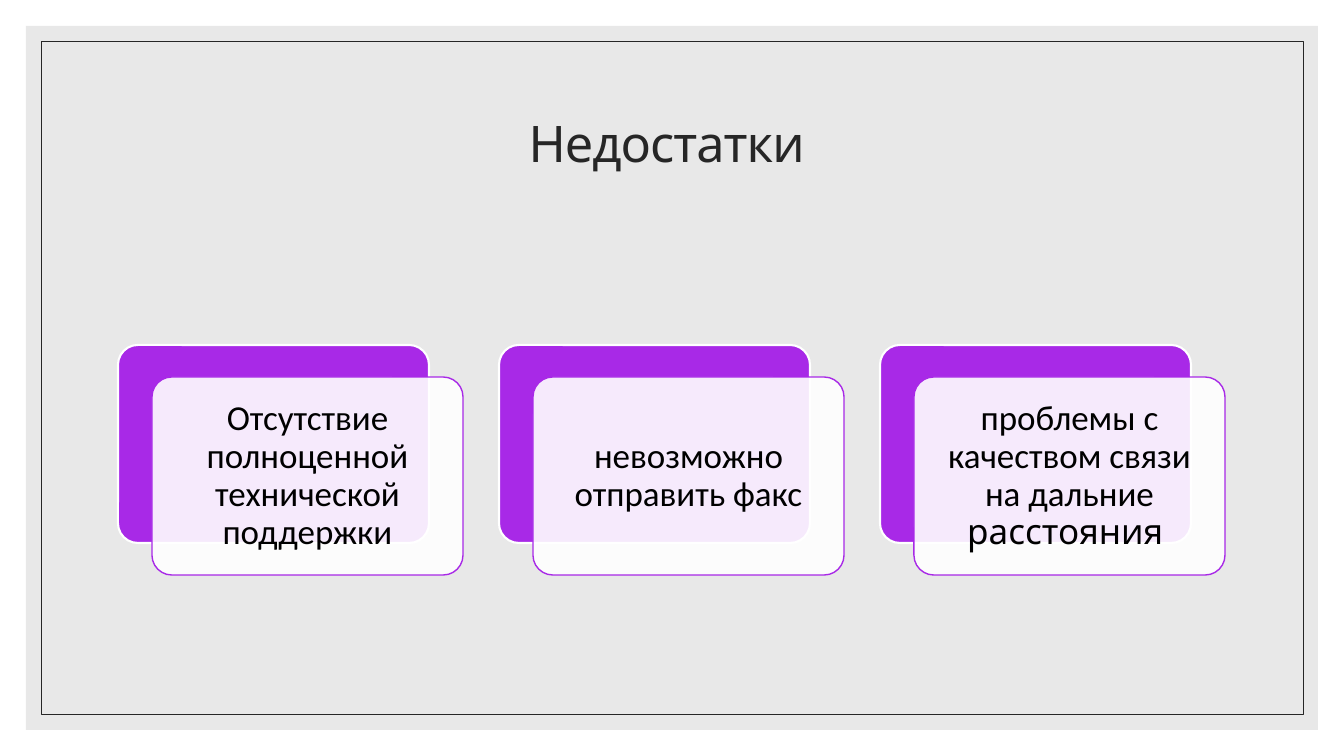
from dataclasses import dataclass

from lxml.etree import SubElement
from pptx import Presentation
from pptx.dml.color import RGBColor
from pptx.enum.shapes import MSO_SHAPE
from pptx.enum.text import MSO_ANCHOR, PP_ALIGN
from pptx.oxml.ns import qn
from pptx.shapes.autoshape import Shape
from pptx.slide import Slide
from pptx.text.text import TextFrame
from pptx.util import Emu, Inches, Pt

WHITE = RGBColor(0xFF, 0xFF, 0xFF)
BLACK = RGBColor(0x00, 0x00, 0x00)
GREY = RGBColor(0xD9, 0xD9, 0xD9)
DARK = RGBColor(0x26, 0x26, 0x26)
PURPLE = RGBColor(0xA8, 0x29, 0xE7)

WIDTH, HEIGHT = 1344, 756
SCALE = 12192000 / WIDTH
BODY, HEAD = "Calibri", "League Spartan"


@dataclass
class Box:
    left: int
    top: int
    width: int
    height: int

    def emu(self) -> list[Emu]:
        sides = (self.left, self.top, self.width, self.height)
        return [Emu(round(side * SCALE)) for side in sides]


@dataclass
class Style:
    fill: RGBColor | None = None
    alpha: int = 100
    line: RGBColor | None = None
    weight: float = 0


@dataclass
class Part:
    text: str
    font: str = BODY


FRAME = Style(GREY, alpha=60)
BORDER = Style(line=DARK, weight=0.5)
BACK = Style(PURPLE, line=WHITE, weight=1.5)
FRONT = Style(WHITE, alpha=90, line=PURPLE, weight=1)

CARDS = [
    [Part("Отсутствие полноценной технической поддержки")],
    [Part("невозможно отправить факс")],
    [Part("проблемы с качеством связи на дальние "), Part("расстояния ", HEAD)],
]
LEFT, TOP, STEP = 118, 345, 381
CARD_W, CARD_H = 311, 198
SHIFT_X, SHIFT_Y = 34, 32


def draw(slide: Slide, kind: MSO_SHAPE, box: Box, style: Style) -> Shape:
    shape = slide.shapes.add_shape(kind, *box.emu())
    shape.shadow.inherit = False
    if style.fill is None:
        shape.fill.background()
    else:
        shape.fill.solid()
        shape.fill.fore_color.rgb = style.fill
        if style.alpha < 100:
            color = shape.fill._xPr.find(f"{qn('a:solidFill')}/{qn('a:srgbClr')}")
            SubElement(color, qn("a:alpha"), val=str(style.alpha * 1000))
    if style.line is None:
        shape.line.fill.background()
    else:
        shape.line.color.rgb = style.line
        shape.line.width = Pt(style.weight)
    return shape


def write(frame: TextFrame, parts: list[Part], size: int, color: RGBColor,
          spacing: int = 0) -> None:
    frame.word_wrap = True
    frame.vertical_anchor = MSO_ANCHOR.MIDDLE
    para = frame.paragraphs[0]
    para.alignment = PP_ALIGN.CENTER
    para.line_spacing = 0.9
    para.font.size = Pt(size)
    para.font.color.rgb = color
    if len(parts) == 1:
        para.font.name = parts[0].font
    for part in parts:
        run = para.add_run()
        run.text = part.text
        if len(parts) > 1:
            run.font.name = part.font
        if spacing:
            run._r.get_or_add_rPr().set("spc", str(spacing))


def card(slide: Slide, left: int, parts: list[Part]) -> None:
    back = Box(left, TOP, CARD_W, CARD_H)
    front = Box(left + SHIFT_X, TOP + SHIFT_Y, CARD_W, CARD_H)
    for box, style in ((back, BACK), (front, FRONT)):
        shape = draw(slide, MSO_SHAPE.ROUNDED_RECTANGLE, box, style)
        shape.adjustments[0] = 0.1
    # The front panel carries the text
    frame = shape.text_frame
    frame.margin_left = frame.margin_right = Inches(0.1)
    frame.margin_top = frame.margin_bottom = Inches(0.1)
    write(frame, parts, 25, BLACK)


def main() -> None:
    deck = Presentation()
    deck.slide_width = Emu(round(WIDTH * SCALE))
    deck.slide_height = Emu(round(HEIGHT * SCALE))
    slide = deck.slides.add_slide(deck.slide_layouts[6])

    # Backdrop and thin border
    draw(slide, MSO_SHAPE.RECTANGLE, Box(26, 26, 1292, 704), FRAME)
    draw(slide, MSO_SHAPE.RECTANGLE, Box(41, 41, 1262, 673), BORDER)

    # Title
    title = slide.shapes.add_textbox(*Box(118, 71, 1109, 151).emu())
    write(title.text_frame, [Part("Недостатки ", HEAD)], 36, DARK, spacing=-70)

    # Row of cards
    for index, parts in enumerate(CARDS):
        card(slide, LEFT + index * STEP, parts)

    deck.save("out.pptx")


if __name__ == "__main__":
    main()
